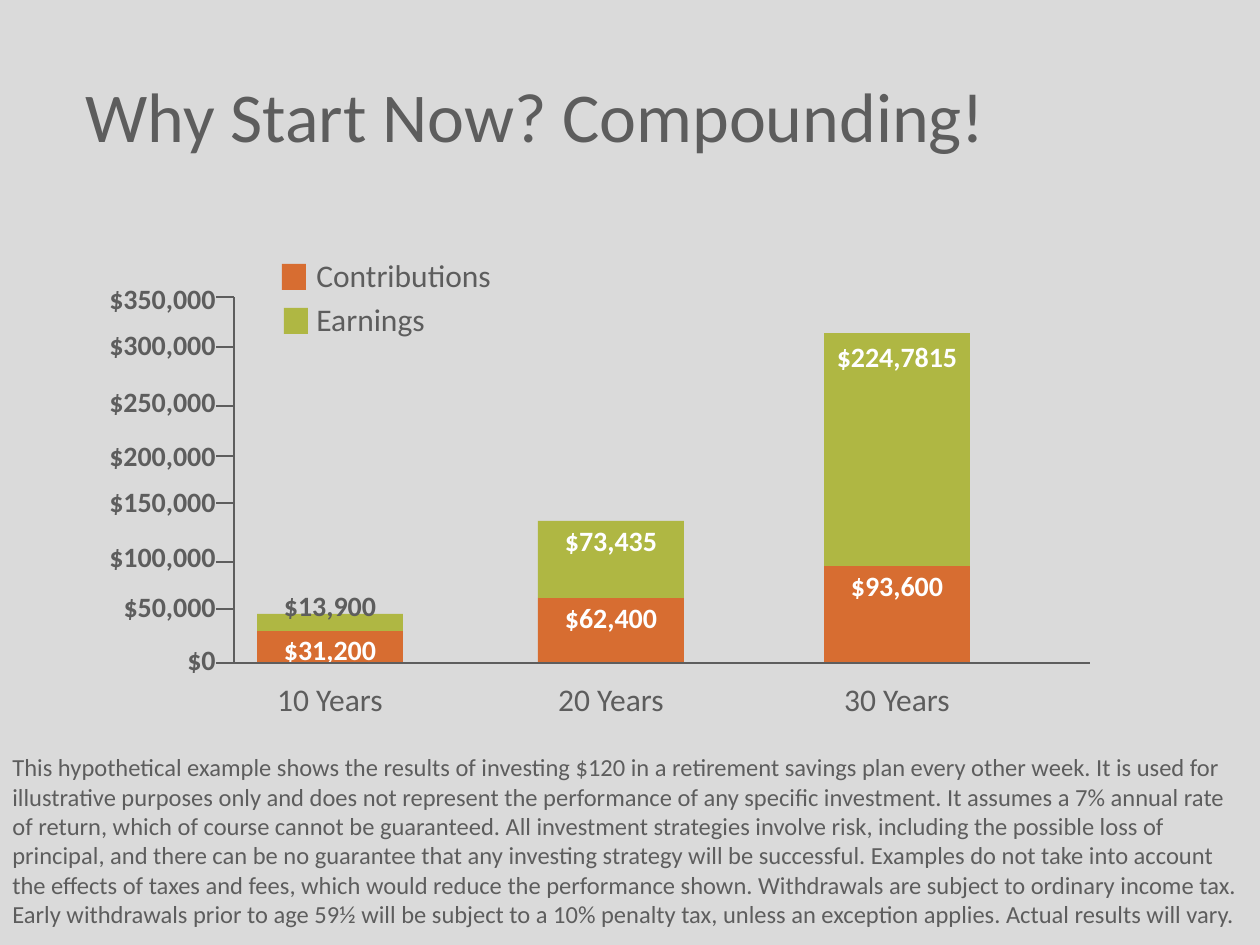
from dataclasses import dataclass

from lxml.etree import SubElement
from pptx import Presentation
from pptx.dml.color import RGBColor
from pptx.enum.shapes import MSO_CONNECTOR, MSO_SHAPE
from pptx.enum.text import MSO_ANCHOR, MSO_AUTO_SIZE, PP_ALIGN
from pptx.oxml.ns import qn
from pptx.util import Pt

TITLE = "Why Start Now? Compounding!"
DISCLAIMER = (
    "This hypothetical example shows the results of investing $120 in a retirement "
    "savings plan every other week. It is used for illustrative purposes only and does "
    "not represent the performance of any specific investment. It assumes a 7% annual "
    "rate of return, which of course cannot be guaranteed. All investment strategies "
    "involve risk, including the possible loss of principal, and there can be no "
    "guarantee that any investing strategy will be successful. Examples do not take "
    "into account the effects of taxes and fees, which would reduce the performance "
    "shown. Withdrawals are subject to ordinary income tax. Early withdrawals prior to "
    "age 59½ will be subject to a 10% penalty tax, unless an exception applies. Actual "
    "results will vary."
)


@dataclass(frozen=True)
class Theme:
    font: str = "Calibri"
    background: str = "DADADA"
    ink: str = "5D5D5D"
    on_bar: str = "FFFFFF"
    contributions: str = "D76D31"
    earnings: str = "AFB743"
    title: int = 40
    label: int = 18
    value: int = 16
    note: int = 14


THEME = Theme()

# Scale label, top of its text box, height of its tick
SCALE = [
    ("$350,000", 275, 297),
    ("$300,000", 321, 347),
    ("$250,000", 378, 406),
    ("$200,000", 432, 456),
    ("$150,000", 478, 503),
    ("$100,000", 533, 562),
    ("$50,000", 583, 609),
    ("$0", 636, 663),
]
# Period, bar left, then (value, bar top, value box top, value colour) from the base up
BARS = [
    ("10 Years", 257, [("$31,200", 631, 626, THEME.on_bar), ("$13,900", 614, 582, THEME.ink)]),
    ("20 Years", 538, [("$62,400", 598, 594, THEME.on_bar), ("$73,435", 521, 517, THEME.on_bar)]),
    ("30 Years", 824, [("$93,600", 566, 562, THEME.on_bar), ("$224,7815", 333, 333, THEME.on_bar)]),
]
SERIES_COLORS = (THEME.contributions, THEME.earnings)
# Series, swatch left, swatch top, text top
LEGEND = [("Contributions", 282, 264, 250), ("Earnings", 284, 308, 294)]

AXIS_X, BASE_Y, AXIS_RIGHT = 234, 663, 1090
TICK = 18
BAR_W = 146
VALUE_W, VALUE_H = 159, 47
PERIOD_W, LABEL_H = 176, 51


def px(n):
    return round(n * 914400 / 126)


def set_font(paragraph, size, color, bold=False, align=PP_ALIGN.LEFT):
    paragraph.alignment = align
    font = paragraph.font
    font.name, font.size, font.bold = THEME.font, Pt(size), bold
    font.color.rgb = RGBColor.from_string(color)


def add_text(slide, text, box, size, color=THEME.ink, **style):
    frame = slide.shapes.add_textbox(*map(px, box)).text_frame
    frame.word_wrap = True
    frame.text = text
    set_font(frame.paragraphs[0], size, color, **style)


def add_block(slide, box, color):
    block = slide.shapes.add_shape(MSO_SHAPE.RECTANGLE, *map(px, box))
    block.shadow.inherit = False
    block.fill.solid()
    block.fill.fore_color.rgb = RGBColor.from_string(color)
    block.line.fill.background()


def add_line(slide, *ends):
    line = slide.shapes.add_connector(MSO_CONNECTOR.STRAIGHT, *map(px, ends))
    line.line.color.rgb = RGBColor.from_string(THEME.ink)
    line.line.width = Pt(1)
    SubElement(line._element.spPr, qn("a:effectLst"))


def add_title(slide):
    title = slide.shapes.title
    title.left, title.top, title.width, title.height = map(px, (73, 73, 1260, 83))
    frame = title.text_frame
    frame.text = TITLE
    frame.auto_size = MSO_AUTO_SIZE.NONE
    frame.vertical_anchor = MSO_ANCHOR.MIDDLE
    set_font(frame.paragraphs[0], THEME.title, THEME.ink)


def add_axes(slide):
    for label, label_top, tick_y in SCALE:
        add_text(slide, label, (69, label_top, VALUE_W, VALUE_H), THEME.value,
                 bold=True, align=PP_ALIGN.RIGHT)
        add_line(slide, AXIS_X - TICK, tick_y, AXIS_X, tick_y)
    add_line(slide, AXIS_X, BASE_Y, AXIS_X, SCALE[0][2])
    add_line(slide, AXIS_X, BASE_Y, AXIS_RIGHT, BASE_Y)


def add_bars(slide):
    for period, left, parts in BARS:
        center = left + BAR_W / 2
        bottom = BASE_Y
        for (_, top, _, _), color in zip(parts, SERIES_COLORS):
            add_block(slide, (left, top, BAR_W, bottom - top), color)
            bottom = top
        for value, _, text_top, color in parts:
            add_text(slide, value, (center - VALUE_W / 2, text_top, VALUE_W, VALUE_H),
                     THEME.value, color, bold=True, align=PP_ALIGN.CENTER)
        add_text(slide, period, (center - PERIOD_W / 2, 674, PERIOD_W, LABEL_H),
                 THEME.label, align=PP_ALIGN.CENTER)


def add_legend(slide):
    for (series, left, top, text_top), color in zip(LEGEND, SERIES_COLORS):
        add_block(slide, (left, top, 24, 26), color)
        add_text(slide, series, (304, text_top, 252, LABEL_H), THEME.label)


def main():
    deck = Presentation()
    deck.slide_width, deck.slide_height = px(1260), px(945)
    slide = deck.slides.add_slide(deck.slide_layouts[5])
    slide.background.fill.solid()
    slide.background.fill.fore_color.rgb = RGBColor.from_string(THEME.background)
    add_title(slide)
    add_bars(slide)
    add_axes(slide)
    add_legend(slide)
    add_text(slide, DISCLAIMER, (0, 746, 1260, 190), THEME.note)
    deck.save("out.pptx")


if __name__ == "__main__":
    main()
